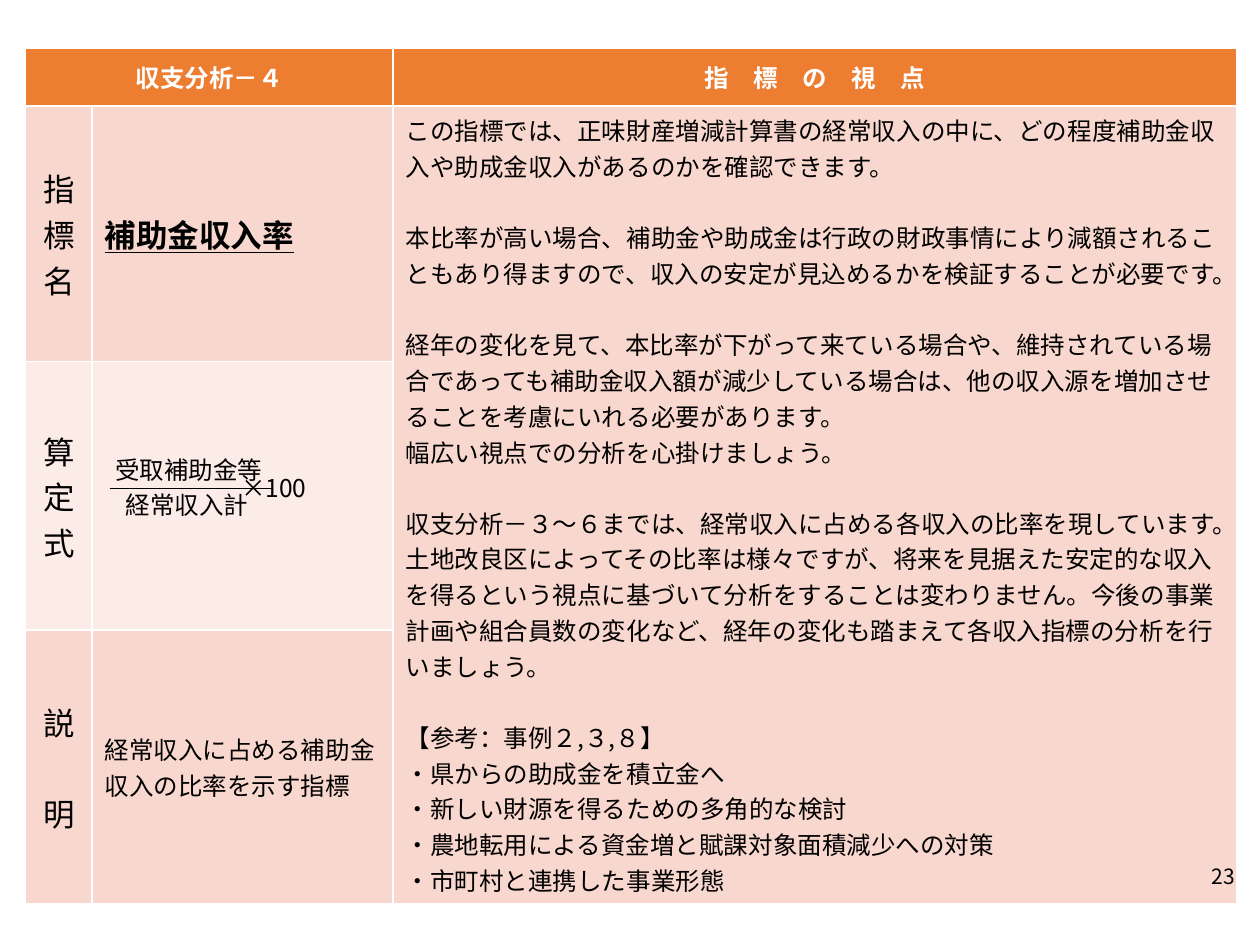
from lxml.etree import SubElement
from pptx import Presentation
from pptx.dml.color import RGBColor
from pptx.enum.shapes import MSO_CONNECTOR
from pptx.enum.text import MSO_ANCHOR, PP_ALIGN
from pptx.oxml.ns import qn
from pptx.util import Pt

FONT = "Noto Sans CJK JP"
COLORS = {
    "header": "ED7D31",
    "band_dark": "F8D7CE",
    "band_light": "FCECE8",
    "text": "000000",
    "header_text": "FFFFFF",
}
LINE_GAP = 20.3  # height of one 14 pt line


def add_text(paragraph, text, size=14, color="text", bold=False, underline=False):
    run = paragraph.add_run()
    run.text = text
    font = run.font
    font.name = FONT
    font.size = Pt(size)
    font.bold = bold
    font.underline = underline
    font.color.rgb = RGBColor.from_string(COLORS[color])
    SubElement(run._r.get_or_add_rPr(), qn("a:ea"), typeface=FONT)


def next_paragraph(frame, index):
    """Return the frame's first paragraph for index 0, otherwise a new one."""
    return frame.paragraphs[0] if index == 0 else frame.add_paragraph()


prs = Presentation()
prs.slide_width, prs.slide_height = Pt(720), Pt(540)
slide = prs.slides.add_slide(prs.slide_layouts[6])

# Indicator table
column_widths = [38, 172, 482]
row_heights = [33, 146, 153.5, 155]
table = slide.shapes.add_table(
    4, 3, Pt(14.6), Pt(27.6), Pt(sum(column_widths)), Pt(sum(row_heights))
).table
for column, width in zip(table.columns, column_widths):
    column.width = Pt(width)
for row, height in zip(table.rows, row_heights):
    row.height = Pt(height)

row_fills = ["header", "band_dark", "band_light", "band_dark"]
for row, fill in zip(table.rows, row_fills):
    for cell in row.cells:
        cell.fill.solid()
        cell.fill.fore_color.rgb = RGBColor.from_string(COLORS[fill])
        cell.vertical_anchor = MSO_ANCHOR.MIDDLE

table.cell(0, 0).merge(table.cell(0, 1))
table.cell(1, 2).merge(table.cell(3, 2))

# Header row
for column_index, heading in [(0, "収支分析－４"), (2, "指　標　の　視　点")]:
    paragraph = table.cell(0, column_index).text_frame.paragraphs[0]
    paragraph.alignment = PP_ALIGN.CENTER
    add_text(paragraph, heading, color="header_text", bold=True)

# Vertical row labels
for row_index, label in enumerate(["指標名", "算定式", "説　明"], start=1):
    cell = table.cell(row_index, 0)
    cell._tc.get_or_add_tcPr().set("vert", "eaVert")
    paragraph = cell.text_frame.paragraphs[0]
    paragraph.alignment = PP_ALIGN.CENTER
    add_text(paragraph, label, size=18)

# Name, formula and explanation
add_text(table.cell(1, 1).text_frame.paragraphs[0], "補助金収入率",
         size=18, bold=True, underline=True)

formula = [("受取補助金等", 6), ("×100", 78), ("経常収入計", 12)]
for index, (term, indent) in enumerate(formula):
    paragraph = next_paragraph(table.cell(2, 1).text_frame, index)
    paragraph.line_spacing = Pt(10)
    paragraph._p.get_or_add_pPr().set("marL", str(Pt(indent)))
    add_text(paragraph, term)

add_text(table.cell(3, 1).text_frame.paragraphs[0],
         "経常収入に占める補助金収入の比率を示す指標")

# Viewpoint column: each group is set off by one line of space
viewpoint_groups = [
    ["この指標では、正味財産増減計算書の経常収入の中に、どの程度補助金収入や"
     "助成金収入があるのかを確認できます。"],
    ["本比率が高い場合、補助金や助成金は行政の財政事情により減額されることも"
     "あり得ますので、収入の安定が見込めるかを検証することが必要です。"],
    ["経年の変化を見て、本比率が下がって来ている場合や、維持されている場合で"
     "あっても補助金収入額が減少している場合は、他の収入源を増加させることを"
     "考慮にいれる必要があります。",
     "幅広い視点での分析を心掛けましょう。"],
    ["収支分析－３～６までは、経常収入に占める各収入の比率を現しています。"
     "土地改良区によってその比率は様々ですが、将来を見据えた安定的な収入を得る"
     "という視点に基づいて分析をすることは変わりません。今後の事業計画や"
     "組合員数の変化など、経年の変化も踏まえて各収入指標の分析を行いましょう。"],
    ["【参考：事例２,３,８】",
     "・県からの助成金を積立金へ",
     "・新しい財源を得るための多角的な検討",
     "・農地転用による資金増と賦課対象面積減少への対策",
     "・市町村と連携した事業形態"],
]
viewpoint = table.cell(1, 2).text_frame
for group_index, group in enumerate(viewpoint_groups):
    for line_index, sentence in enumerate(group):
        paragraph = next_paragraph(viewpoint, group_index + line_index)
        if group_index and line_index == 0:
            paragraph.space_before = Pt(LINE_GAP)
        add_text(paragraph, sentence)

# Page number
page_number = slide.shapes.add_textbox(Pt(648.7), Pt(486), Pt(64), Pt(28.8)).text_frame
page_number.word_wrap = True
page_number.vertical_anchor = MSO_ANCHOR.MIDDLE
page_number.paragraphs[0].alignment = PP_ALIGN.RIGHT
add_text(page_number.paragraphs[0], "23", size=12)

# Fraction bar of the formula
fraction_bar = slide.shapes.add_connector(
    MSO_CONNECTOR.STRAIGHT, Pt(62.6), Pt(279.4), Pt(155.5), Pt(279.4))
fraction_bar.line.width = Pt(0.5)
fraction_bar.line.color.rgb = RGBColor.from_string(COLORS["text"])
SubElement(fraction_bar._element.spPr, qn("a:effectLst"))

prs.save("out.pptx")
